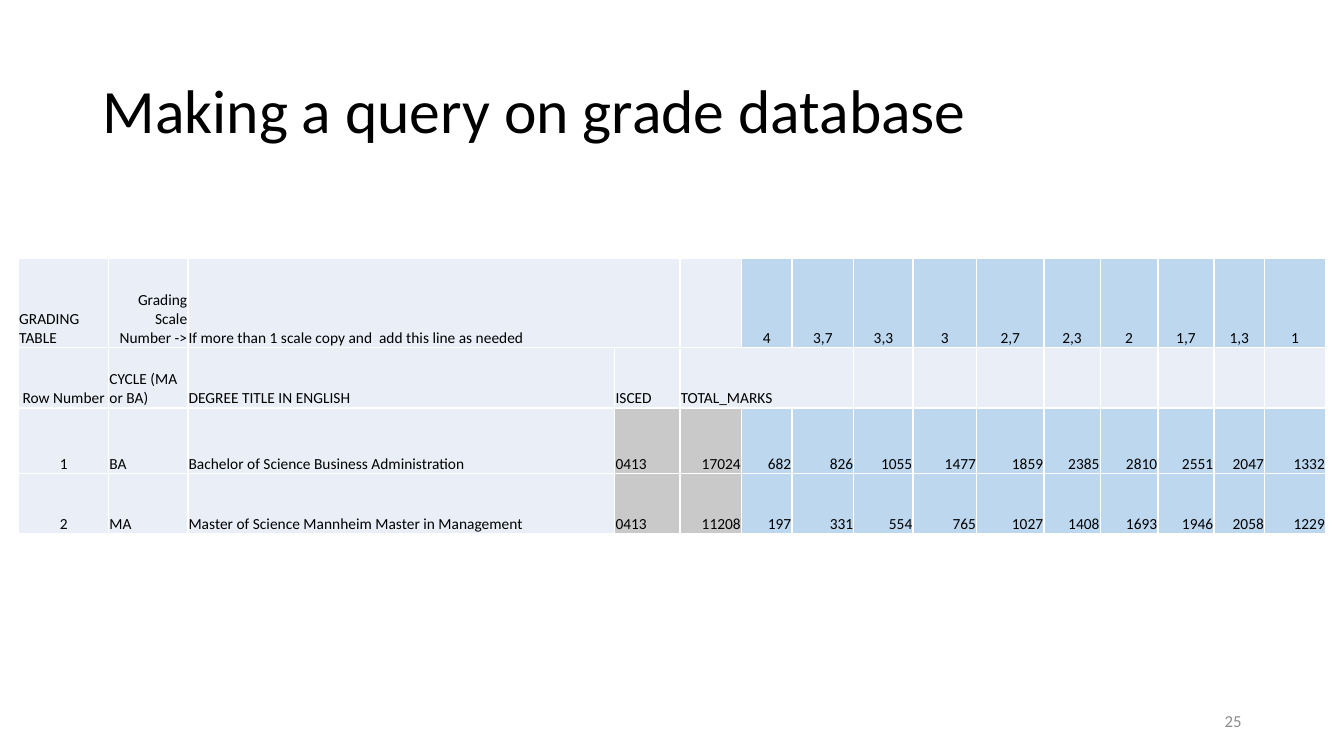
import pptx
import pptx.util
import pptx.dml.color
import pptx.enum.text
import pptx.oxml
import pptx.oxml.ns

Pt = pptx.util.Pt
RGBColor = pptx.dml.color.RGBColor
ALIGN = pptx.enum.text.PP_ALIGN
ANCHOR = pptx.enum.text.MSO_ANCHOR

FONT = "Calibri"
BLACK = RGBColor(0x00, 0x00, 0x00)
GREY_TEXT = RGBColor(0x8C, 0x8C, 0x8C)
PALE = RGBColor(0xEA, 0xEF, 0xF7)
BLUE = RGBColor(0xBD, 0xD7, 0xEE)
GREY = RGBColor(0xC9, 0xC9, 0xC9)

TITLE = "Making a query on grade database"
PAGE_NUMBER = "25"
GRADES = ["4", "3,7", "3,3", "3", "2,7", "2,3", "2", "1,7", "1,3", "1"]
ROWS = [
    ["GRADING TABLE", "Grading Scale Number ->",
     "If more than 1 scale copy and  add this line as needed", "", ""] + GRADES,
    ["Row Number", "CYCLE (MA or BA)", "DEGREE TITLE IN ENGLISH", "ISCED", "TOTAL_MARKS"]
    + [""] * len(GRADES),
    ["1", "BA", "Bachelor of Science Business Administration", "0413", "17024",
     "682", "826", "1055", "1477", "1859", "2385", "2810", "2551", "2047", "1332"],
    ["2", "MA", "Master of Science Mannheim Master in Management", "0413", "11208",
     "197", "331", "554", "765", "1027", "1408", "1693", "1946", "2058", "1229"],
]
COLUMN_WIDTHS = [64.5, 56.5, 305, 46.5, 44, 36, 44.25, 42.25, 45.5, 48, 40.25, 41.25, 40, 36.25, 43.5]
ROW_HEIGHTS = [64, 43, 47, 42.5]
MERGES = [(0, 2, 3), (1, 4, 6)]
ISCED, TOTAL, FIRST_GRADE = 3, 4, 5


def cell_fill(row, column):
    if column >= FIRST_GRADE and row != 1:
        return BLUE
    if column in (ISCED, TOTAL) and row >= 2:
        return GREY
    return PALE


def cell_alignment(row, column):
    if (row == 0 and column >= FIRST_GRADE) or (row > 0 and column == 0):
        return ALIGN.CENTER
    if (row, column) == (0, 1) or (row >= 2 and column >= TOTAL):
        return ALIGN.RIGHT
    return ALIGN.LEFT


def format_text(paragraph, size, color, alignment):
    paragraph.alignment = alignment
    for font in [paragraph.font] + [run.font for run in paragraph.runs]:
        font.name = FONT
        font.size = Pt(size)
        font.color.rgb = color


def add_borders(cell):
    properties = cell._tc.get_or_add_tcPr()
    for side in ("lnL", "lnR", "lnT", "lnB"):
        properties.append(pptx.oxml.parse_xml(
            f'<a:{side} {pptx.oxml.ns.nsdecls("a")} w="12700"><a:solidFill>'
            f'<a:srgbClr val="FFFFFF"/></a:solidFill></a:{side}>'))


def add_grading_table(slide):
    table = slide.shapes.add_table(
        len(ROWS), len(COLUMN_WIDTHS), Pt(13.25), Pt(184.5),
        Pt(sum(COLUMN_WIDTHS)), Pt(sum(ROW_HEIGHTS))).table
    table.first_row = False
    table.horz_banding = False
    for column, width in zip(table.columns, COLUMN_WIDTHS):
        column.width = Pt(width)
    for row, height in zip(table.rows, ROW_HEIGHTS):
        row.height = Pt(height)
    for row, texts in enumerate(ROWS):
        for column, text in enumerate(texts):
            cell = table.cell(row, column)
            cell.text_frame.text = text
            cell.vertical_anchor = ANCHOR.BOTTOM
            cell.margin_left = cell.margin_right = cell.margin_top = Pt(0.5)
            cell.margin_bottom = Pt(0)
            add_borders(cell)
            cell.fill.solid()
            cell.fill.fore_color.rgb = cell_fill(row, column)
            format_text(cell.text_frame.paragraphs[0], 11, BLACK, cell_alignment(row, column))
    for row, first, last in MERGES:
        table.cell(row, first).merge(table.cell(row, last))


def main():
    presentation = pptx.Presentation()
    presentation.slide_width = Pt(960)
    presentation.slide_height = Pt(540)
    slide = presentation.slides.add_slide(presentation.slide_layouts[5])

    title = slide.shapes.title
    title.left, title.top, title.width, title.height = Pt(66), Pt(28.75), Pt(828), Pt(104.5)
    title.text_frame.text = TITLE
    title.text_frame.auto_size = pptx.enum.text.MSO_AUTO_SIZE.NONE
    title.text_frame.vertical_anchor = ANCHOR.MIDDLE
    title_paragraph = title.text_frame.paragraphs[0]
    title_paragraph.line_spacing = 0.9
    format_text(title_paragraph, 44, BLACK, ALIGN.LEFT)

    add_grading_table(slide)

    page_number = slide.shapes.add_textbox(Pt(678), Pt(500.5), Pt(216), Pt(28.75))
    page_number.text_frame.word_wrap = True
    page_number.text_frame.vertical_anchor = ANCHOR.MIDDLE
    page_number.text_frame.text = PAGE_NUMBER
    format_text(page_number.text_frame.paragraphs[0], 12, GREY_TEXT, ALIGN.RIGHT)

    presentation.save("out.pptx")


if __name__ == "__main__":
    main()
